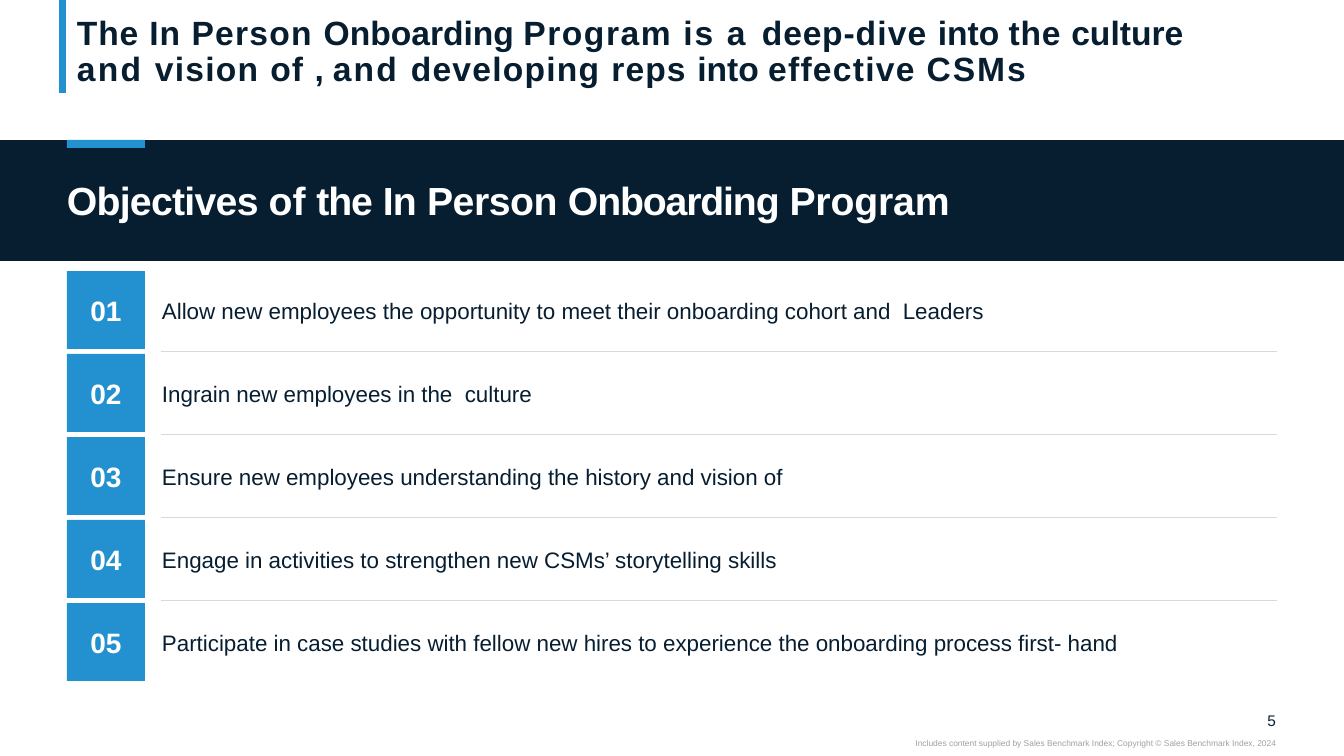
from lxml.etree import SubElement
from pptx import Presentation
from pptx.dml.color import RGBColor
from pptx.enum.shapes import MSO_CONNECTOR, MSO_SHAPE
from pptx.enum.text import MSO_ANCHOR, MSO_AUTO_SIZE, PP_ALIGN
from pptx.oxml.ns import qn
from pptx.util import Emu, Pt

TITLE = [
    [("The ", 60), ("In ", 70), ("Person ", 90), ("Onboarding ", 0),
     ("Program ", 110), ("is ", 150), ("a ", 250), ("deep-", 60),
     ("dive ", 80), ("into ", 0), ("the ", 50), ("culture ", 0)],
    [("and ", 160), ("vision ", 90), ("of ", 80), (", ", -30),
     ("and ", 160), ("developing ", 90), ("reps ", 80), ("into ", 0),
     ("effective ", 90), ("CSMs", 140)],
]
HEADING = [
    [("Objectives ", -50), ("of ", 0), ("the ", -80), ("In ", -50),
     ("Person ", -30), ("Onboarding ", -80), ("Program", -10)],
]
GOALS = [
    "Allow new employees the opportunity to meet their onboarding cohort and  Leaders",
    "Ingrain new employees in the  culture",
    "Ensure new employees understanding the history and vision of",
    "Engage in activities to strengthen new CSMs’ storytelling skills",
    "Participate in case studies with fellow new hires to experience the onboarding process first- hand",
]
PAGE = "5"
CREDIT = "Includes content supplied by Sales Benchmark Index; Copyright © Sales Benchmark Index, 2024"

NAVY = RGBColor(0x07, 0x1E, 0x31)
BLUE = RGBColor(0x23, 0x91, 0xCF)
WHITE = RGBColor(0xFF, 0xFF, 0xFF)
GREY = RGBColor(0xA0, 0xA0, 0xA0)
RULE = RGBColor(0xD9, 0xD9, 0xD9)

WIDE, HIGH = 1344, 756
LEFT, RIGHT = 67, 1277
BAND, TILE = 140, 78
TOP, STEP = 271, 83
TEXT = 161


def px(n):
    return Emu(round(n * 914400 / 100.8))


def style(par, size, color, bold, align):
    par.alignment = align
    font = par.font
    font.name, font.size, font.bold = "Arial", Pt(size), bold
    font.color.rgb = color


def rect(x, y, w, h, color):
    shape = slide.shapes.add_shape(MSO_SHAPE.RECTANGLE, px(x), px(y), px(w), px(h))
    shape.shadow.inherit = False
    shape.fill.solid()
    shape.fill.fore_color.rgb = color
    shape.line.fill.background()
    return shape


def line(x1, y1, x2, y2, color, width):
    rule = slide.shapes.add_connector(
        MSO_CONNECTOR.STRAIGHT, px(x1), px(y1), px(x2), px(y2))
    rule.line.color.rgb = color
    rule.line.width = Pt(width)
    SubElement(rule._element.spPr, qn("a:effectLst"))


def label(x, y, w, h, lines, size, color, bold=False, align=PP_ALIGN.LEFT,
          anchor=MSO_ANCHOR.TOP, inset=0, grow=True):
    frame = slide.shapes.add_textbox(px(x), px(y), px(w), px(h)).text_frame
    frame.word_wrap = True
    frame.auto_size = MSO_AUTO_SIZE.SHAPE_TO_FIT_TEXT if grow else MSO_AUTO_SIZE.NONE
    frame.vertical_anchor = anchor
    frame.margin_left = frame.margin_right = px(inset)
    frame.margin_top = frame.margin_bottom = 0
    par = frame.paragraphs[0]
    style(par, size, color, bold, align)
    for i, row in enumerate(lines):
        if i:
            par.add_line_break()
        for words, gap in row:
            run = par.add_run()
            run.text = words
            if gap:
                run._r.get_or_add_rPr().set("spc", str(gap))
    return par


deck = Presentation()
deck.slide_width, deck.slide_height = px(WIDE), px(HIGH)
slide = deck.slides.add_slide(deck.slide_layouts[6])

line(63, 0, 63, 93, BLUE, 5)
label(1242, 711, 34, 19, [[(PAGE, 0)]], 11, NAVY,
      align=PP_ALIGN.RIGHT, anchor=MSO_ANCHOR.MIDDLE)
label(756, 738, 520, 10, [[(CREDIT, 0)]], 6, GREY, align=PP_ALIGN.RIGHT)
title = label(LEFT, 4, 1209, 85, TITLE, 24, NAVY, bold=True,
              anchor=MSO_ANCHOR.BOTTOM, inset=10, grow=False)
title.line_spacing = 0.9

rect(0, BAND, WIDE, 121, NAVY)
rect(LEFT, BAND, TILE, 8, BLUE)
label(LEFT, 176, 1198, 47, HEADING, 28, WHITE, bold=True)

for i, goal in enumerate(GOALS):
    y = TOP + i * STEP
    frame = rect(LEFT, y, TILE, TILE, BLUE).text_frame
    frame.vertical_anchor = MSO_ANCHOR.MIDDLE
    frame.text = f"{i + 1:02}"
    style(frame.paragraphs[0], 20, WHITE, True, PP_ALIGN.CENTER)
    label(TEXT, y + 26, RIGHT - TEXT, 27, [[(goal, 0)]], 16, NAVY,
          anchor=MSO_ANCHOR.MIDDLE, inset=1)
    if i:
        line(TEXT, y - 3, RIGHT, y - 3, RULE, 0.5)

deck.save("out.pptx")
